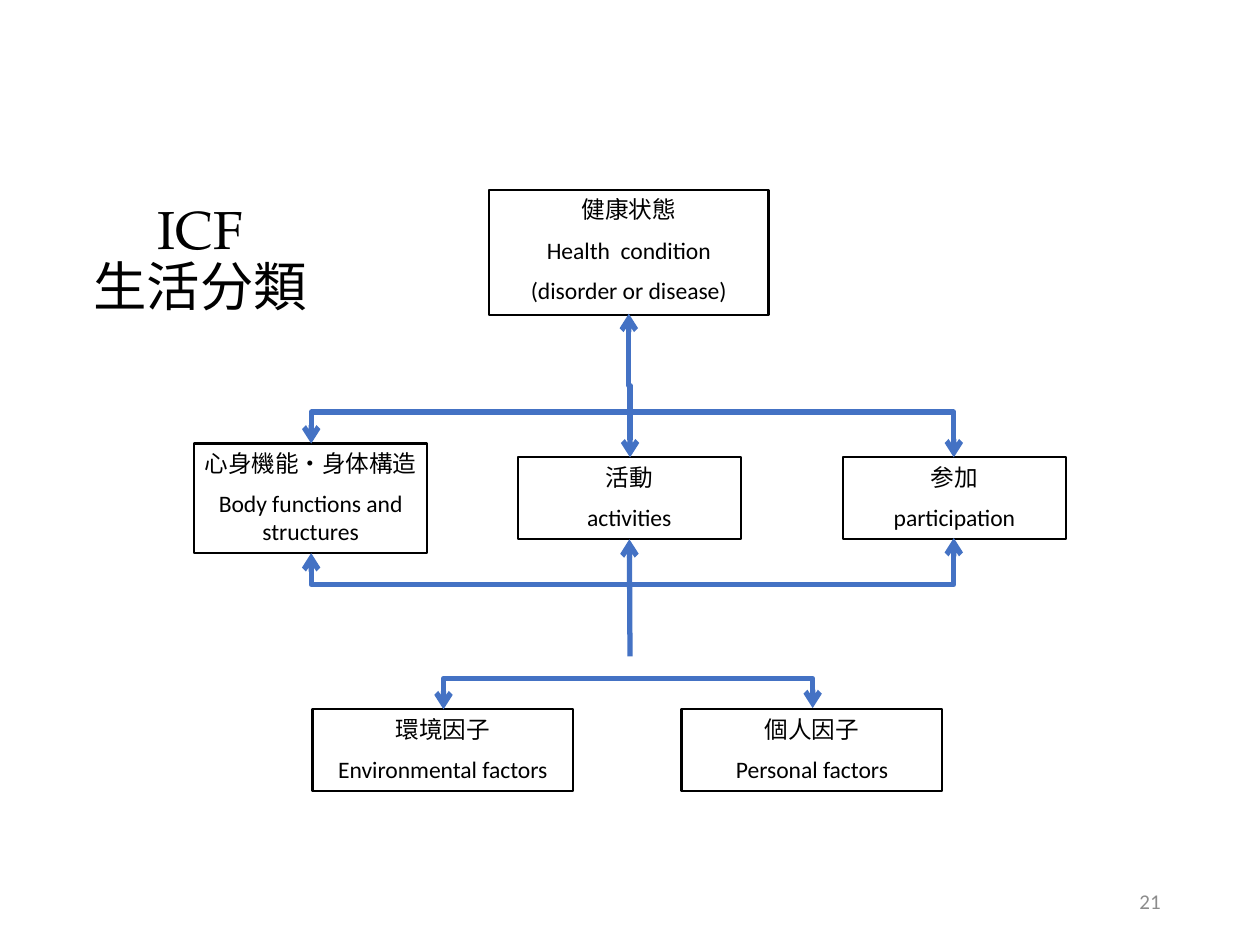
"""Build the ICF classification diagram slide."""
from dataclasses import dataclass

from lxml import etree
from pptx import Presentation
from pptx.dml.color import RGBColor
from pptx.enum import shapes, text
from pptx.oxml.ns import qn
from pptx.util import Inches, Pt

BLACK = RGBColor(0x00, 0x00, 0x00)
WHITE = RGBColor(0xFF, 0xFF, 0xFF)
BLUE = RGBColor(0x44, 0x72, 0xC4)
GRAY = RGBColor(0x8C, 0x8C, 0x8C)
LATIN, CJK, SERIF = "Calibri", "Noto Sans CJK JP", "TeX Gyre Pagella"


@dataclass
class Box:
    left: float
    top: float
    width: float
    height: float
    japanese: str
    english: tuple[str, ...]


@dataclass
class Elbow:
    x1: float
    y1: float
    x2: float
    y2: float
    bar_y: float


HEALTH = Box(3.88, 1.51, 2.22, 0.99, "健康状態", ("Health  condition", "(disorder or disease)"))
BODY = Box(1.54, 3.52, 1.85, 0.87, "心身機能・身体構造", ("Body functions and structures",))
ACTIVITIES = Box(4.11, 3.63, 1.77, 0.65, "活動", ("activities",))
PARTICIPATION = Box(6.69, 3.63, 1.77, 0.65, "参加", ("participation",))
ENVIRONMENT = Box(2.48, 5.63, 2.07, 0.65, "環境因子", ("Environmental factors",))
PERSONAL = Box(5.41, 5.63, 2.07, 0.65, "個人因子", ("Personal factors",))

ELBOWS = [
    Elbow(4.99, 2.49, 5, 3.63, 3.06),
    Elbow(2.47, 3.52, 7.57, 3.63, 3.27),
    Elbow(2.47, 4.39, 7.57, 4.27, 4.64),
    Elbow(3.52, 5.63, 6.45, 5.62, 5.38),
]


def style_paragraph(p, name: str, size: float, color: RGBColor, align) -> None:
    p.alignment = align
    p.font.name, p.font.size = name, Pt(size)
    p.font.color.rgb = color
    props = p._p.get_or_add_pPr().find(qn("a:defRPr"))
    etree.SubElement(props, qn("a:ea")).set("typeface", name)


def set_insets(tf) -> None:
    tf.margin_left = tf.margin_right = Inches(0.07)
    tf.margin_top = tf.margin_bottom = Inches(0.04)


def add_box(s, box: Box):
    sp = s.shapes.add_shape(shapes.MSO_SHAPE.RECTANGLE, Inches(box.left), Inches(box.top),
                            Inches(box.width), Inches(box.height))
    sp.shadow.inherit = False
    sp.fill.solid()
    sp.fill.fore_color.rgb = WHITE
    sp.line.color.rgb = BLACK
    sp.line.width = Pt(1.25)
    tf = sp.text_frame
    tf.word_wrap = True
    tf.auto_size = text.MSO_AUTO_SIZE.SHAPE_TO_FIT_TEXT
    tf.vertical_anchor = text.MSO_ANCHOR.TOP
    set_insets(tf)
    tf.text = "\n".join((box.japanese, *box.english))
    for i, p in enumerate(tf.paragraphs):
        style_paragraph(p, LATIN if i else CJK, 13.5, BLACK, text.PP_ALIGN.CENTER)
        if i:
            p.space_before = Pt(6.75)
    return sp


def style_connector(c, ends: tuple[str, ...]) -> None:
    c.line.color.rgb = BLUE
    c.line.width = Pt(3)
    props = c._element.spPr
    for end in ends:
        etree.SubElement(props.find(qn("a:ln")), qn(f"a:{end}")).set("type", "arrow")
    etree.SubElement(props, qn("a:effectLst"))


def add_elbow(s, e: Elbow) -> None:
    """Draw an elbow that leaves and arrives vertically, bending at bar_y."""
    width, height = abs(e.y2 - e.y1), e.x2 - e.x1
    left = (e.x1 + e.x2 - width) / 2
    top = (e.y1 + e.y2 - height) / 2
    c = s.shapes.add_connector(shapes.MSO_CONNECTOR.ELBOW, Inches(left), Inches(top),
                               Inches(left + width), Inches(top + height))
    props = c._element.spPr
    xfrm = props.find(qn("a:xfrm"))
    upward = e.y2 < e.y1
    xfrm.set("rot", str((90 if upward else 270) * 60000))
    xfrm.set("flipH", "1")
    if upward:
        xfrm.set("flipV", "1")
    guide = etree.SubElement(props.find(qn("a:prstGeom")).find(qn("a:avLst")), qn("a:gd"))
    guide.set("name", "adj1")
    guide.set("fmla", f"val {round((e.bar_y - e.y1) / (e.y2 - e.y1) * 100000)}")
    style_connector(c, ("headEnd", "tailEnd"))


def add_title(s) -> None:
    sp = s.shapes.title
    sp.left, sp.top, sp.width, sp.height = map(Inches, (0.4, 1.6, 2.38, 0.94))
    tf = sp.text_frame
    tf.word_wrap = True
    tf.auto_size = text.MSO_AUTO_SIZE.NONE
    tf.vertical_anchor = text.MSO_ANCHOR.MIDDLE
    set_insets(tf)
    tf.text = "ICF\n生活分類"
    for p, name in zip(tf.paragraphs, (SERIF, CJK)):
        style_paragraph(p, name, 30.5, BLACK, text.PP_ALIGN.CENTER)
        p.line_spacing = 0.9


def add_page_number(s) -> None:
    sp = s.shapes.add_textbox(Inches(7.06), Inches(6.95), Inches(2.25), Inches(0.4))
    tf = sp.text_frame
    tf.word_wrap = True
    tf.vertical_anchor = text.MSO_ANCHOR.MIDDLE
    tf.text = "21"
    style_paragraph(tf.paragraphs[0], LATIN, 12, GRAY, text.PP_ALIGN.RIGHT)


def main() -> None:
    prs = Presentation()
    prs.slide_width, prs.slide_height = Inches(10), Inches(7.5)
    s = prs.slides.add_slide(prs.slide_layouts[5])
    for box in (HEALTH, BODY, PARTICIPATION, ENVIRONMENT, PERSONAL):
        add_box(s, box)
    activities = add_box(s, ACTIVITIES)
    for elbow in ELBOWS:
        add_elbow(s, elbow)
    c = s.shapes.add_connector(shapes.MSO_CONNECTOR.STRAIGHT, Inches(5), Inches(5.21),
                               Inches(5), Inches(4.28))
    c.end_connect(activities, 2)
    style_connector(c, ("tailEnd",))
    add_title(s)
    add_page_number(s)
    prs.save("out.pptx")


if __name__ == "__main__":
    main()
